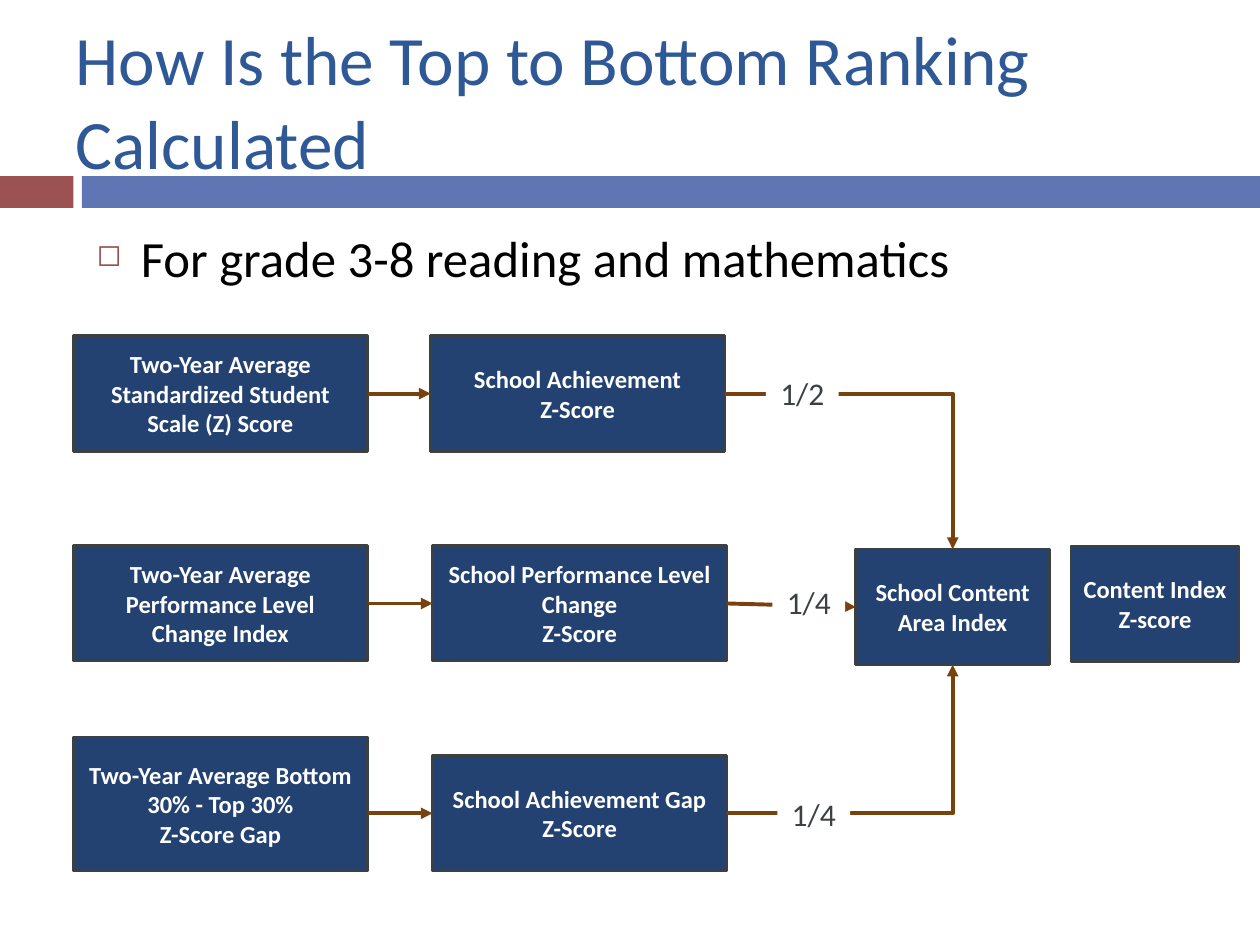
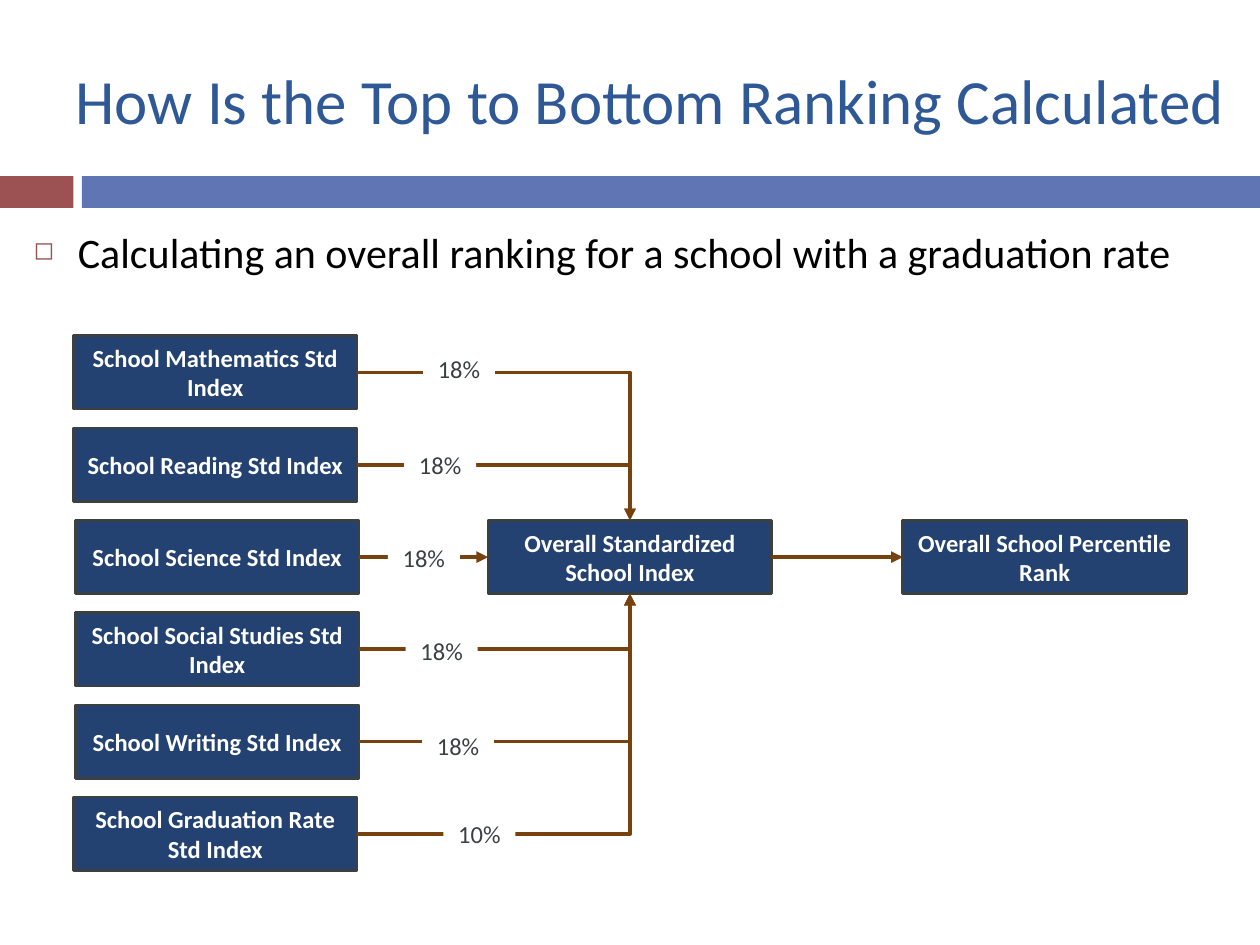
"""Build two slides that show how the top to bottom ranking is calculated."""
from lxml import etree
from pptx import Presentation
from pptx.dml.color import RGBColor
from pptx.enum.shapes import MSO_CONNECTOR, MSO_SHAPE
from pptx.enum.text import MSO_ANCHOR, MSO_AUTO_SIZE, PP_ALIGN
from pptx.oxml.ns import qn
from pptx.util import Cm, Pt

RECTANGLE = MSO_SHAPE.RECTANGLE
STRAIGHT, ELBOW = MSO_CONNECTOR.STRAIGHT, MSO_CONNECTOR.ELBOW
TOP, MIDDLE = MSO_ANCHOR.TOP, MSO_ANCHOR.MIDDLE
LEFT, CENTER = PP_ALIGN.LEFT, PP_ALIGN.CENTER
NO_FIT, GROW = MSO_AUTO_SIZE.NONE, MSO_AUTO_SIZE.SHAPE_TO_FIT_TEXT
TOP_SITE, LEFT_SITE, BOTTOM_SITE, RIGHT_SITE = range(4)

THEME = {
    "font": "Calibri",
    "arrow": "77420D",
    "arrow_width": 2.25,
    "outline_width": 1.5,
    "bullet": "9C5252",
    "title": {"color": "2F5897", "size": 36, "align": LEFT, "anchor": MIDDLE},
    "body": {"color": "000000", "size": 24, "align": LEFT, "anchor": TOP},
    "box": {"fill": "234271", "line": "3B4042", "color": "FFFFFF", "size": 14,
            "bold": True, "align": CENTER, "anchor": MIDDLE},
    "fraction": {"fill": "FFFFFF", "color": "3B4042", "size": 18,
                 "align": CENTER, "anchor": TOP, "fit": GROW},
    "percent": {"fill": "FFFFFF", "color": "3B4042", "size": 14,
                "align": CENTER, "anchor": TOP, "fit": GROW},
    "red_band": {"fill": "9C5252"},
    "blue_band": {"fill": "6076B4"},
}


def add_block(slide, style, position, text="", shape=None):
    shape = shape or slide.shapes.add_shape(RECTANGLE, 0, 0, 0, 0)
    for name, length in zip(("left", "top", "width", "height"), position):
        setattr(shape, name, Cm(length))
    shape.shadow.inherit = False
    for part, key in ((shape.fill, "fill"), (shape.line.fill, "line")):
        if key in style:
            part.solid()
            part.fore_color.rgb = RGBColor.from_string(style[key])
        else:
            part.background()
    if "line" in style:
        shape.line.width = Pt(THEME["outline_width"])
    if not text:
        return shape
    frame = shape.text_frame
    frame.text = text
    frame_format = {"word_wrap": True, "vertical_anchor": style["anchor"],
                    "auto_size": style.get("fit", NO_FIT)}
    for name, value in frame_format.items():
        setattr(frame, name, value)
    font_format = {"name": THEME["font"], "size": Pt(style["size"]),
                   "bold": style.get("bold", False)}
    for paragraph in frame.paragraphs:
        paragraph.alignment = style["align"]
        font = paragraph.runs[0].font
        for name, value in font_format.items():
            setattr(font, name, value)
        font.color.rgb = RGBColor.from_string(style["color"])
    return shape


def add_arrow(slide, start, end, site=LEFT_SITE):
    if site == LEFT_SITE:
        arrow = slide.shapes.add_connector(
            STRAIGHT,
            start.left + start.width, start.top + start.height - end.height // 2,
            end.left, end.top + end.height // 2)
    else:
        arrow = slide.shapes.add_connector(ELBOW, 0, 0, 0, 0)
        arrow.begin_connect(start, RIGHT_SITE)
        arrow.end_connect(end, site)
        arrow.element.spPr.find(qn("a:prstGeom")).set("prst", "bentConnector2")
    arrow.line.color.rgb = RGBColor.from_string(THEME["arrow"])
    arrow.line.width = Pt(THEME["arrow_width"])
    properties = arrow.element.spPr
    etree.SubElement(properties.find(qn("a:ln")), qn("a:tailEnd"), type="triangle")
    etree.SubElement(properties, qn("a:effectLst"))


presentation = Presentation()
presentation.slide_width, presentation.slide_height = Cm(25.4), Cm(19.05)
title_only = presentation.slide_layouts[5]

headings = [
    (39.6, 24.13, "For grade 3-8 reading and mathematics", 29,
     (1.7, 4.45, 22.66, 12.5)),
    (36, 23.71, "Calculating an overall ranking for a school with a graduation rate",
     24, (0.43, 4.45, 24.97, 14.02)),
]
for title_size, title_width, body_text, body_size, body_position in headings:
    slide = presentation.slides.add_slide(title_only)
    add_block(slide, THEME["red_band"], (0, 3.55, 1.48, 0.64))
    add_block(slide, THEME["blue_band"], (1.65, 3.55, 23.75, 0.64))
    add_block(slide, {**THEME["title"], "size": title_size},
              (1.27, 0.64, title_width, 2.74),
              "How Is the Top to Bottom Ranking Calculated", slide.shapes.title)
    body = add_block(slide, {**THEME["body"], "size": body_size}, body_position,
                     body_text, slide.shapes.add_textbox(0, 0, 0, 0))
    paragraph = body.text_frame.paragraphs[0]
    paragraph.space_before = Pt(7)
    bullet = paragraph._p.get_or_add_pPr()
    bullet.set("marL", str(Cm(0.89)))
    bullet.set("indent", str(-Cm(0.89)))
    bullet_color = etree.SubElement(bullet, qn("a:buClr"))
    etree.SubElement(bullet_color, qn("a:srgbClr"), val=THEME["bullet"])
    etree.SubElement(bullet, qn("a:buSzPct"), val="60000")
    etree.SubElement(bullet, qn("a:buChar"), char="◻")

content_slide, overall_slide = presentation.slides

content_area = add_block(content_slide, THEME["box"], (17.25, 11.07, 3.91, 2.33),
                         "School Content\nArea Index")
add_block(content_slide, THEME["box"], (21.59, 11.01, 3.39, 2.33),
          "Content Index Z-score")
measures = [
    ("Two-Year Average Standardized Student Scale (Z) Score", 0,
     "School Achievement\nZ-Score", 8.68, TOP_SITE, "1/2", (15.44, 7.42)),
    ("Two-Year Average Performance Level Change Index", 0,
     "School Performance Level Change\nZ-Score", 8.72, LEFT_SITE, "1/4",
     (15.57, 11.63)),
    ("Two-Year Average Bottom 30% - Top 30%\nZ-Score Gap", 0.37,
     "School Achievement Gap Z-Score", 8.72, BOTTOM_SITE, "1/4", (15.67, 15.9)),
]
for row, (average, extra, score, score_left, site, weight, place) in enumerate(measures):
    top = 6.77 + row * 4.23
    average_box = add_block(content_slide, THEME["box"],
                            (1.48, top - extra, 5.93, 2.33 + extra), average)
    score_box = add_block(content_slide, THEME["box"],
                          (score_left, top, 5.93, 2.33), score)
    add_arrow(content_slide, average_box, score_box)
    add_arrow(content_slide, score_box, content_area, site)
    add_block(content_slide, THEME["fraction"], (*place, 1.47, 1.02), weight)

index_size = (5.72, 1.48)
overall_index = add_block(overall_slide, THEME["box"], (9.84, 10.49, *index_size),
                          "Overall Standardized School Index")
percentile_rank = add_block(overall_slide, THEME["box"], (18.2, 10.49, *index_size),
                            "Overall School Percentile Rank")
add_arrow(overall_slide, overall_index, percentile_rank)
subjects = [
    ("Mathematics", 1.48, TOP_SITE, "18%", (8.53, 7.01)),
    ("Reading", 1.48, TOP_SITE, "18%", (8.15, 8.94)),
    ("Science", 1.52, LEFT_SITE, "18%", (7.82, 10.82)),
    ("Social Studies", 1.52, BOTTOM_SITE, "18%", (8.18, 12.7)),
    ("Writing", 1.52, BOTTOM_SITE, "18%", (8.51, 14.61)),
    ("Graduation Rate", 1.48, BOTTOM_SITE, "10%", (8.94, 16.38)),
]
weights = []
for row, (subject, left, site, weight, place) in enumerate(subjects):
    subject_box = add_block(overall_slide, THEME["box"],
                            (left, 6.77 + row * 1.86, *index_size),
                            f"School {subject} Std Index")
    add_arrow(overall_slide, subject_box, overall_index, site)
    add_block(overall_slide, THEME["percent"], (*place, 1.45, 0.86), weight)

presentation.save("out.pptx")
